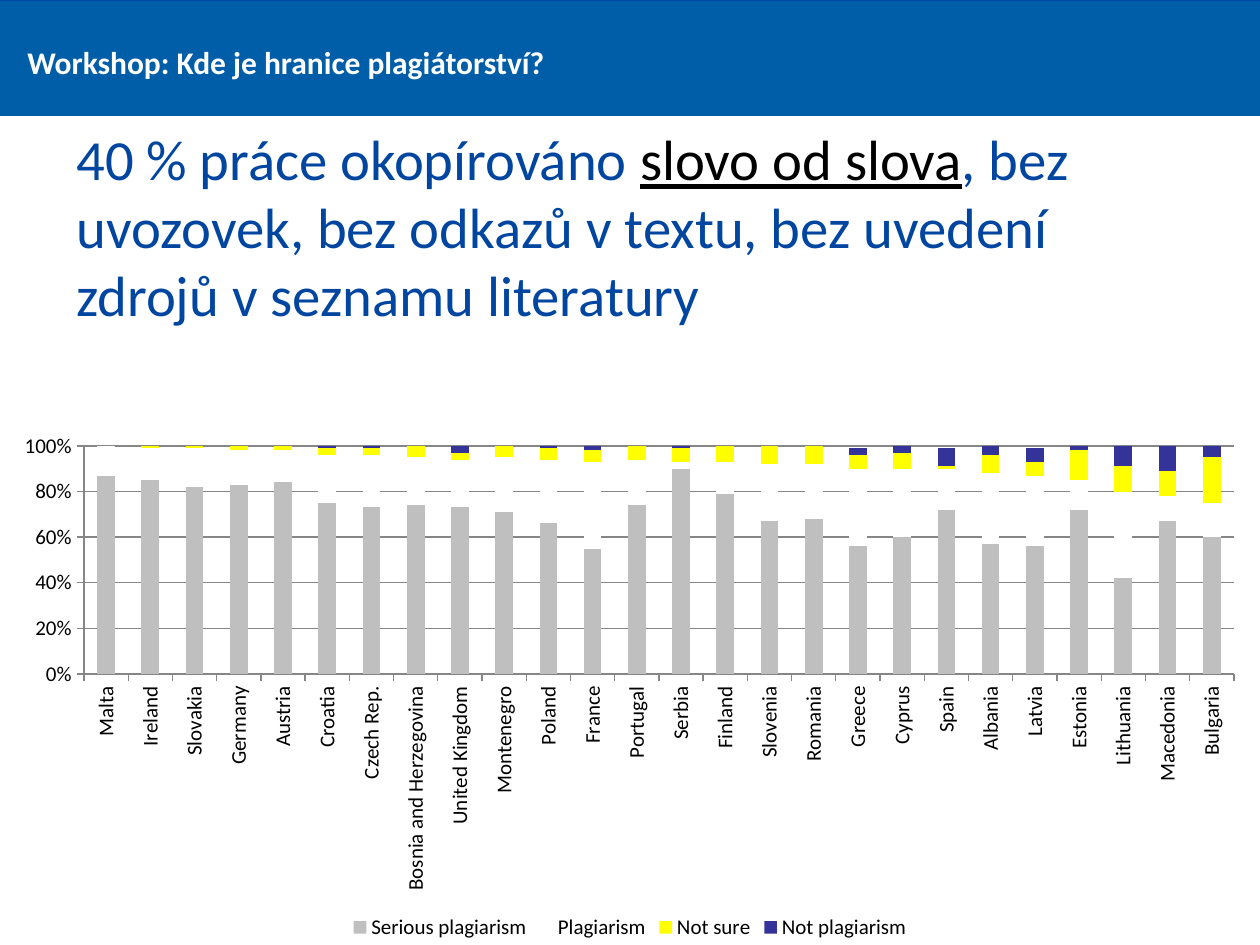
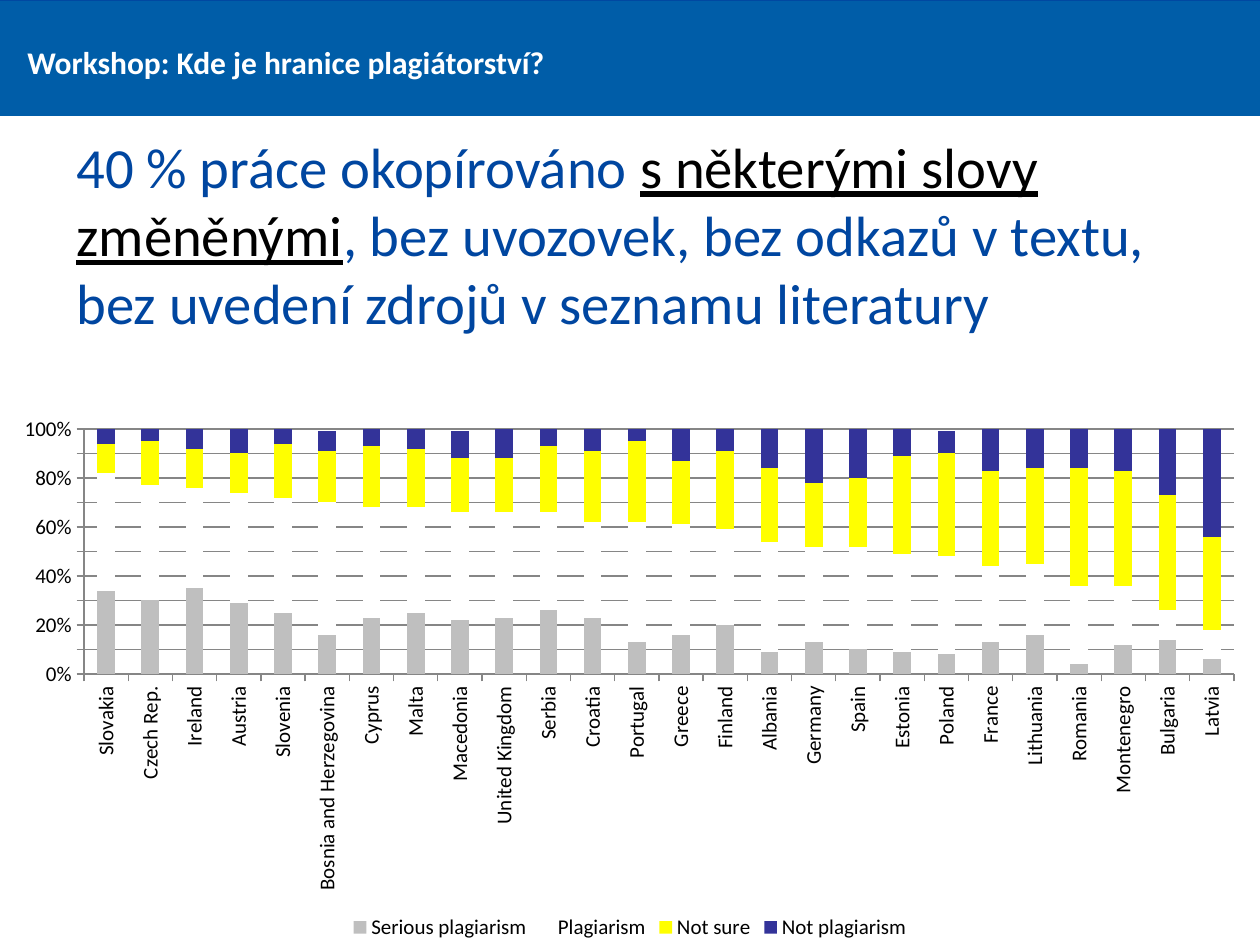
from lxml import etree
from pptx import Presentation
from pptx import util as u
from pptx.chart.data import CategoryChartData
from pptx.dml.color import RGBColor
from pptx.enum import chart as charts, shapes, text
from pptx.oxml import ns

PX = 914400 / 126
WIDTH, HEIGHT = 1260, 945
FONT = "Calibri"
COLORS = {
    "navy": "0046A0", "band": "005DA8", "white": "FFFFFF", "black": "000000",
    "grid": "868686", "serious": "BFBFBF", "plagiarism": "FFFFFF",
    "unsure": "FFFF00", "fine": "333399",
}
ANSWERS = [("Serious plagiarism", "serious"), ("Plagiarism", "plagiarism"),
           ("Not sure", "unsure"), ("Not plagiarism", "fine")]
HEADER = "Workshop: Kde je hranice plagiátorství?"
QUESTION_START = "40 % práce okopírováno "
QUESTION_END = ", bez uvozovek, bez odkazů v textu, bez uvedení zdrojů v seznamu literatury"

# Per country: percentages in the order of ANSWERS
WORD_FOR_WORD = {
    "Malta": (87, 13, 0, 0), "Ireland": (85, 14, 1, 0), "Slovakia": (82, 17, 1, 1),
    "Germany": (83, 15, 2, 0), "Austria": (84, 14, 2, 1), "Croatia": (75, 21, 3, 1),
    "Czech Rep.": (73, 23, 3, 1), "Bosnia and Herzegovina": (74, 21, 5, 0),
    "United Kingdom": (73, 21, 3, 3), "Montenegro": (71, 24, 6, 0),
    "Poland": (66, 28, 5, 1), "France": (55, 38, 5, 2), "Portugal": (74, 20, 6, 1),
    "Serbia": (90, 3, 6, 1), "Finland": (79, 14, 7, 1), "Slovenia": (67, 25, 8, 0),
    "Romania": (68, 24, 8, 1), "Greece": (56, 34, 6, 3), "Cyprus": (60, 30, 7, 3),
    "Spain": (72, 18, 1, 8), "Albania": (57, 31, 8, 4), "Latvia": (56, 31, 6, 6),
    "Estonia": (72, 13, 13, 2), "Lithuania": (42, 38, 11, 9),
    "Macedonia": (67, 11, 11, 11), "Bulgaria": (60, 15, 20, 5),
}
SOME_WORDS_CHANGED = {
    "Slovakia": (34, 48, 12, 6), "Czech Rep.": (30, 47, 18, 6),
    "Ireland": (35, 41, 16, 9), "Austria": (29, 45, 16, 10),
    "Slovenia": (25, 47, 22, 6), "Bosnia and Herzegovina": (16, 54, 21, 8),
    "Cyprus": (23, 45, 25, 7), "Malta": (25, 43, 24, 9), "Macedonia": (22, 44, 22, 11),
    "United Kingdom": (23, 43, 22, 12), "Serbia": (26, 40, 27, 8),
    "Croatia": (23, 39, 29, 9), "Portugal": (13, 49, 33, 5), "Greece": (16, 45, 26, 13),
    "Finland": (20, 39, 32, 9), "Albania": (9, 45, 30, 17), "Germany": (13, 39, 26, 22),
    "Spain": (10, 42, 28, 20), "Estonia": (9, 40, 40, 11), "Poland": (8, 40, 42, 9),
    "France": (13, 31, 39, 17), "Lithuania": (16, 29, 39, 17),
    "Romania": (4, 32, 48, 16), "Montenegro": (12, 24, 47, 18),
    "Bulgaria": (14, 12, 47, 27), "Latvia": (6, 12, 38, 44),
}


def px(*lengths):
    return [u.Emu(round(length * PX)) for length in lengths]


def color(name):
    return RGBColor.from_string(COLORS[name])


def add_span(para, words, size=18, fill="black", bold=False, underline=False):
    span = para.add_run()
    span.text = words
    font = span.font
    font.name, font.size, font.bold, font.underline = FONT, u.Pt(size), bold, underline
    font.color.rgb = color(fill)


class Slides:
    def __init__(self):
        self.deck = Presentation()
        self.deck.slide_width, self.deck.slide_height = px(WIDTH, HEIGHT)
        self.page = None

    def new_page(self):
        self.page = self.deck.slides.add_slide(self.deck.slide_layouts[6])
        self.band(0, "navy")
        self.band(1, "band")
        box = self.text_box(15, 37, 547, 50, wrap=False)
        add_span(box.paragraphs[0], HEADER, fill="white", bold=True)

    def band(self, top, fill):
        shape = self.page.shapes.add_shape(
            shapes.MSO_SHAPE.RECTANGLE, *px(0, top, WIDTH, 115))
        shape.shadow.inherit = False
        shape.fill.solid()
        shape.fill.fore_color.rgb = color(fill)
        shape.line.fill.background()

    def text_box(self, left, top, width, height, wrap=True):
        box = self.page.shapes.add_textbox(*px(left, top, width, height)).text_frame
        box.word_wrap = wrap
        return box

    def title(self, top, height, stressed):
        box = self.text_box(64, top, 1142, height)
        box.vertical_anchor = text.MSO_ANCHOR.MIDDLE
        para = box.paragraphs[0]
        add_span(para, QUESTION_START, size=32.4, fill="navy")
        add_span(para, stressed, size=32.4, underline=True)
        add_span(para, QUESTION_END, size=32.4, fill="navy")

    def answer_chart(self, top, answers, step):
        data = CategoryChartData(number_format="0%")
        data.categories = list(answers)
        for (name, _), shares in zip(ANSWERS, zip(*answers.values())):
            data.add_series(name, [share / 100 for share in shares])
        height = HEIGHT - top
        chart = self.page.shapes.add_chart(
            charts.XL_CHART_TYPE.COLUMN_STACKED, *px(0, top, WIDTH, height), data).chart
        chart.has_title = False
        chart.font.name, chart.font.size = FONT, u.Pt(12)
        chart.font.color.rgb = color("black")
        chart.has_legend = True
        chart.legend.position = charts.XL_LEGEND_POSITION.BOTTOM
        chart.legend.include_in_layout = False

        plot = chart.plots[0]
        plot.gap_width, plot.overlap, plot.vary_by_categories = 150, 100, False
        for series, (_, fill) in zip(plot.series, ANSWERS):
            series.format.fill.solid()
            series.format.fill.fore_color.rgb = color(fill)

        # Axes
        shares, countries = chart.value_axis, chart.category_axis
        shares.minimum_scale, shares.maximum_scale, shares.major_unit = 0, 1, step
        shares.tick_labels.number_format = "0%"
        shares.tick_labels.number_format_is_linked = False
        shares.has_major_gridlines = True
        for line in (shares.format.line, countries.format.line,
                     shares.major_gridlines.format.line):
            line.color.rgb, line.width = color("grid"), u.Pt(0.75)
        for axis in (shares, countries):
            axis.major_tick_mark = charts.XL_TICK_MARK.OUTSIDE
            axis.tick_labels.font.size = u.Pt(12)
        body = countries._element.find(ns.qn("c:txPr")).find(ns.qn("a:bodyPr"))
        body.set("rot", "-5400000")
        body.set("vert", "horz")
        self.place_plot(chart, top, height)

    def place_plot(self, chart, top, height):
        """Fix the inner plot area: 23 px below the chart top, down to 674 px."""
        area = chart._chartSpace.chart.plotArea
        for old in area.findall(ns.qn("c:layout")):
            area.remove(old)
        layout = etree.Element(ns.qn("c:layout"))
        manual = etree.SubElement(layout, ns.qn("c:manualLayout"))
        settings = {"layoutTarget": "inner", "xMode": "edge", "yMode": "edge",
                    "x": 84 / WIDTH, "y": 23 / height,
                    "w": 1150 / WIDTH, "h": (674 - top - 23) / height}
        for name, value in settings.items():
            etree.SubElement(manual, ns.qn("c:" + name)).set("val", str(value))
        area.insert(0, layout)


def main():
    slides = Slides()

    # Copied word for word
    slides.new_page()
    slides.title(116, 220, "slovo od slova")
    slides.answer_chart(423, WORD_FOR_WORD, step=0.2)

    # Copied with some words changed
    slides.new_page()
    slides.title(115, 238, "s některými slovy změněnými")
    slides.answer_chart(406, SOME_WORDS_CHANGED, step=0.1)

    slides.deck.save("out.pptx")


if __name__ == "__main__":
    main()
